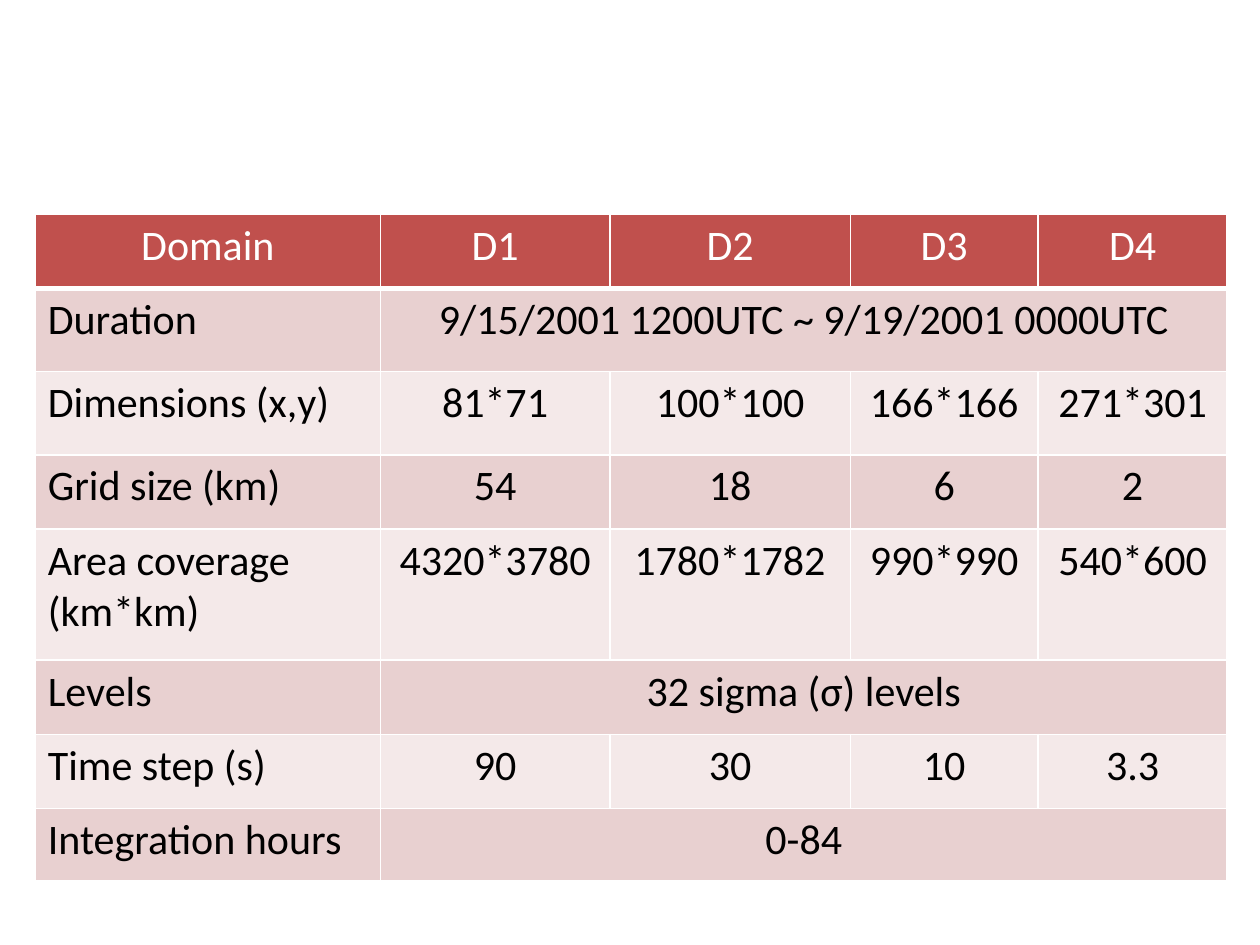
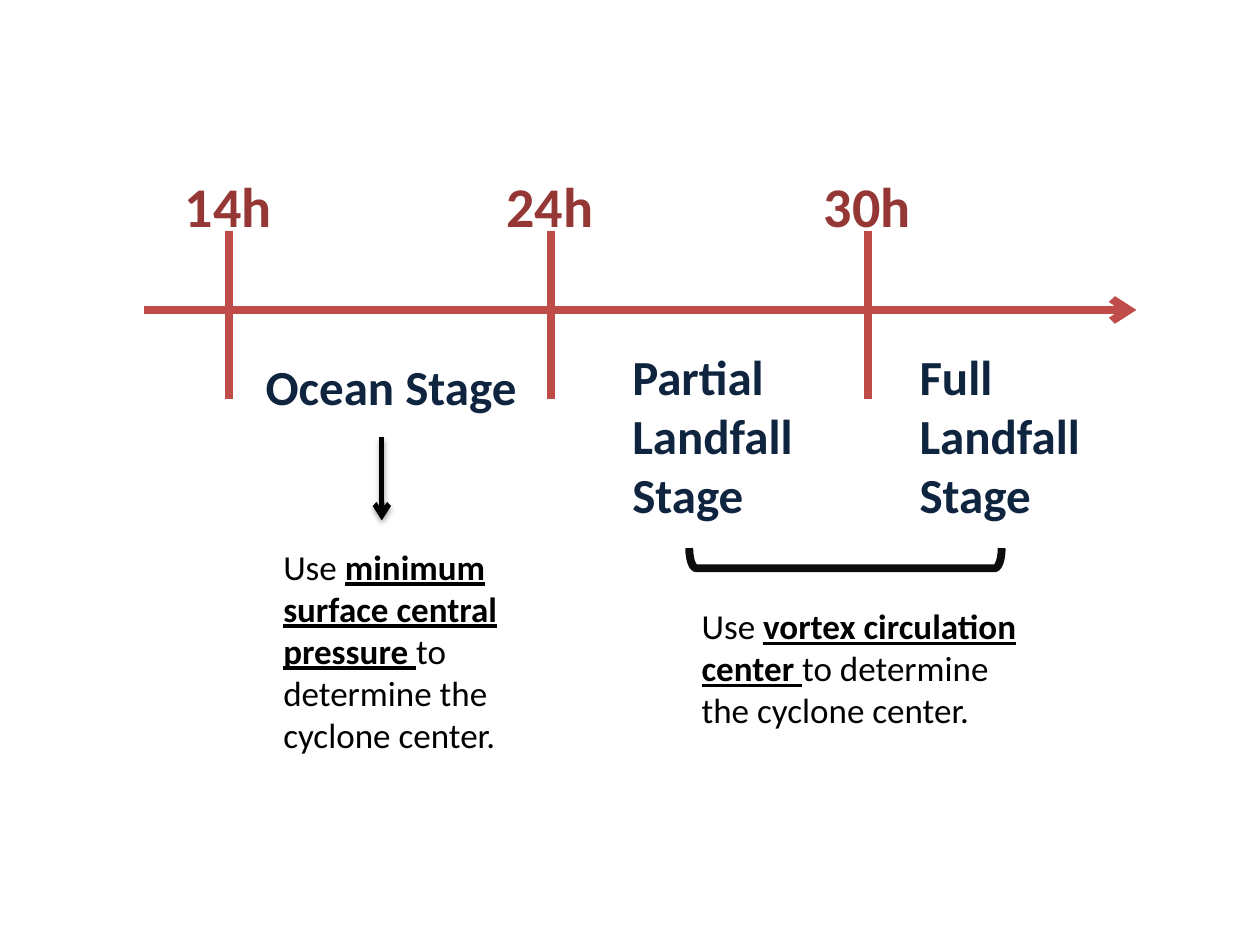
from lxml import etree
from pptx import Presentation
from pptx.dml.color import RGBColor
from pptx.enum import shapes, text
from pptx.oxml import ns
from pptx.util import Inches, Pt

COLORS = {
    "header": "C0504D",
    "band_dark": "E8D0D0",
    "band_light": "F4E9E9",
    "axis": "BF4C48",
    "hour": "953735",
    "stage": "0F243E",
    "bracket": "0D0D0D",
    "black": "000000",
    "white": "FFFFFF",
}
FONT = "Calibri"


def rgb(name):
    return RGBColor.from_string(COLORS[name])


def add_node(parent, tag, **attrs):
    return etree.SubElement(parent, ns.qn(tag), {k: str(v) for k, v in attrs.items()})


def write(p, content, size=20, color="black", bold=False, underline=False):
    r = p.add_run()
    r.text = content
    r.font.name = FONT
    r.font.size = Pt(size)
    r.font.bold = bold
    r.font.underline = underline
    r.font.color.rgb = rgb(color)


class Deck:
    def __init__(self):
        self.prs = Presentation()
        self.prs.slide_width = Inches(10)
        self.prs.slide_height = Inches(7.5)
        self.s = None

    def slide(self):
        self.s = self.prs.slides.add_slide(self.prs.slide_layouts[6])

    def text(self, x, y, w, h, runs, wrap=True, **fmt):
        tf = self.s.shapes.add_textbox(Inches(x), Inches(y), Inches(w), Inches(h)).text_frame
        tf.word_wrap = wrap
        tf.auto_size = text.MSO_AUTO_SIZE.SHAPE_TO_FIT_TEXT
        for content, extra in runs:
            write(tf.paragraphs[0], content, **{**fmt, **extra})

    def line(self, x1, y1, x2, y2, color, width, arrow=False, shadow=False):
        ends = [Inches(v) for v in (x1, y1, x2, y2)]
        c = self.s.shapes.add_connector(shapes.MSO_CONNECTOR.STRAIGHT, *ends)
        c.line.color.rgb = rgb(color)
        c.line.width = Pt(width)
        if arrow:
            add_node(c.line._get_or_add_ln(), "a:tailEnd", type="arrow")
        effects = add_node(c._element.spPr, "a:effectLst")
        if shadow:
            outer = add_node(effects, "a:outerShdw", blurRad=Pt(3.1), dist=Pt(1.8),
                             dir=90 * 60000, rotWithShape=0)
            shade = add_node(outer, "a:srgbClr", val=COLORS["black"])
            add_node(shade, "a:alpha", val=35000)

    def bracket(self, x, y, w, h, color, width):
        sp = self.s.shapes.add_shape(shapes.MSO_SHAPE.LEFT_BRACKET,
                                     Inches(x), Inches(y), Inches(w), Inches(h))
        sp.rotation = 270
        sp.adjustments[0] = 0.35
        sp.shadow.inherit = False
        sp.fill.background()
        sp.line.color.rgb = rgb(color)
        sp.line.width = Pt(width)

    def cell(self, cell, content, fill, color, centered, bottom):
        cell.fill.solid()
        cell.fill.fore_color.rgb = rgb(fill)
        tc_pr = cell._tc.get_or_add_tcPr()
        sides = (("a:lnL", 1), ("a:lnR", 1), ("a:lnT", 1), ("a:lnB", bottom))
        for i, (tag, width) in enumerate(sides):
            ln = add_node(tc_pr, tag, w=Pt(width))
            add_node(add_node(ln, "a:solidFill"), "a:srgbClr", val=COLORS["white"])
            tc_pr.insert(i, ln)
        if content:
            p = cell.text_frame.paragraphs[0]
            p.alignment = text.PP_ALIGN.CENTER if centered else text.PP_ALIGN.LEFT
            write(p, content, size=24, color=color)

    def table(self, x, y, widths, heights, rows):
        t = self.s.shapes.add_table(len(rows), len(widths), Inches(x), Inches(y),
                                    Inches(sum(widths)), Inches(sum(heights))).table
        for col, w in zip(t.columns, widths):
            col.width = Inches(w)
        for row, h in zip(t.rows, heights):
            row.height = Inches(h)
        for i, values in enumerate(rows):
            head = i == 0
            fill = "header" if head else "band_dark" if i % 2 else "band_light"
            for j in range(len(widths)):
                content = values[j] if j < len(values) else ""
                self.cell(t.cell(i, j), content, fill, "white" if head else "black",
                          head or j > 0, 3 if head else 1)
            if len(values) == 2:
                t.cell(i, 1).merge(t.cell(i, len(widths) - 1))


def domain_slide(deck):
    deck.slide()
    deck.table(
        0.28, 1.7,
        [2.74, 1.82, 1.91, 1.49, 1.5],
        [0.59, 0.66, 0.66, 0.59, 1.04, 0.59, 0.59, 0.57],
        [
            ["Domain", "D1", "D2", "D3", "D4"],
            ["Duration", "9/15/2001 1200UTC ~ 9/19/2001 0000UTC"],
            ["Dimensions (x,y)", "81*71", "100*100", "166*166", "271*301"],
            ["Grid size (km)", "54", "18", "6", "2"],
            ["Area coverage (km*km)", "4320*3780", "1780*1782", "990*990", "540*600"],
            ["Levels", "32 sigma (σ) levels"],
            ["Time step (s)", "90", "30", "10", "3.3"],
            ["Integration hours", "0-84"],
        ],
    )


def timeline_slide(deck):
    deck.slide()
    deck.line(1.14, 2.46, 9.02, 2.46, "axis", 4.5, arrow=True)
    for hour, x in (("14h", 1.82), ("24h", 4.37), ("30h", 6.89)):
        deck.line(x, 1.83, x, 3.17, "axis", 4.5)
        deck.text(x - 0.45, 1.31, 0.9, 0.64, [(hour, {})], wrap=False,
                  size=32, color="hour", bold=True)

    stages = (
        ("Ocean Stage", 2.01, 2.78, 2.22, 0.57, False),
        ("Partial Landfall Stage", 4.92, 2.7, 1.5, 1.51, True),
        ("Full Landfall Stage", 7.2, 2.7, 1.5, 1.51, True),
    )
    for name, x, y, w, h, wrap in stages:
        deck.text(x, y, w, h, [(name, {})], wrap=wrap, size=28, color="stage", bold=True)

    deck.line(3.03, 3.47, 3.03, 4.13, "black", 3, arrow=True, shadow=True)
    deck.bracket(6.63, 3.19, 0.16, 2.48, "bracket", 4.5)

    methods = (
        ("minimum surface central pressure", 2.15, 4.28, 2.06, 1.78),
        ("vortex circulation center", 5.47, 4.75, 2.83, 1.11),
    )
    for method, x, y, w, h in methods:
        deck.text(x, y, w, h, [
            ("Use ", {}),
            (method, {"bold": True, "underline": True}),
            (" ", {"underline": True}),
            ("to determine the cyclone center.", {}),
        ])


def main():
    deck = Deck()
    domain_slide(deck)
    timeline_slide(deck)
    deck.prs.save("out.pptx")


if __name__ == "__main__":
    main()
